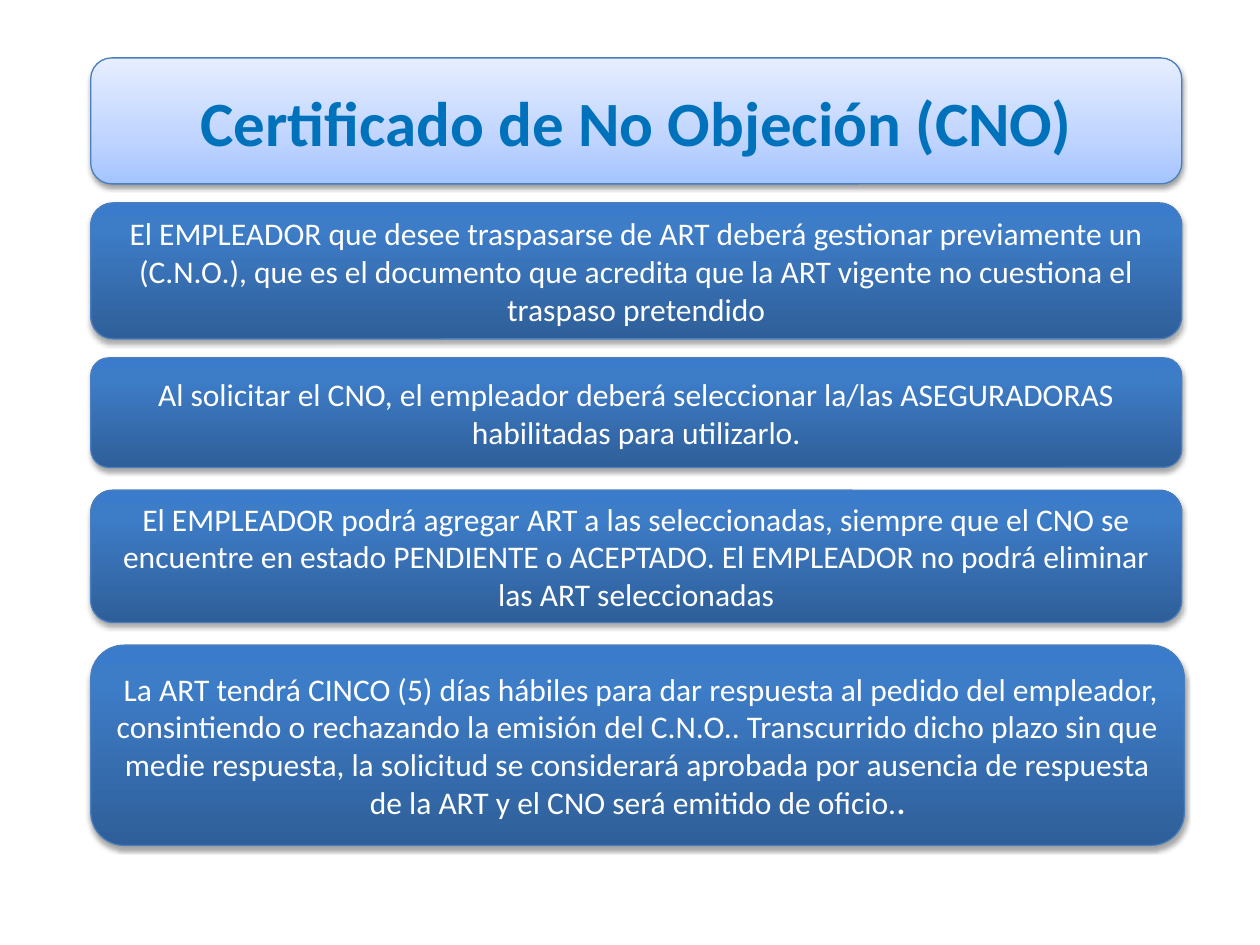
from lxml.etree import SubElement
from pptx import Presentation
from pptx.dml.color import RGBColor
from pptx.enum.shapes import MSO_SHAPE as Shape
from pptx.enum.text import MSO_ANCHOR as Anchor, PP_ALIGN as Align
from pptx.oxml.ns import qn
from pptx.util import Inches, Pt

COLORS = {
    "title": "0072BC",
    "text": "FFFFFF",
    "border": "4B7EBC",
    "shadow": "000000",
}
LIGHT_STOPS = [(0, "A4C4FF"), (35, "BFD4FF"), (100, "E6EEFF")]
DARK_STOPS = [(0, "2F5F99"), (80, "3D7CC7"), (100, "3A7CCB")]
LEFT, WIDTH = 0.72, 8.66

RULES = [
    (1.61, WIDTH, 1.08, [
        "El EMPLEADOR que desee traspasarse de ART deberá gestionar previamente un "
        "(C.N.O.), que es el documento que acredita que la ART vigente no cuestiona "
        "el traspaso pretendido"]),
    (2.84, WIDTH, 0.87, [
        "Al solicitar el CNO, el empleador deberá seleccionar la/las ASEGURADORAS "
        "habilitadas para utilizarlo."]),
    (5.12, 8.68, 1.59, [
        " La ART tendrá CINCO (5) días hábiles para dar respuesta al pedido del "
        "empleador, consintiendo o rechazando la emisión del C.N.O.. Transcurrido "
        "dicho plazo sin que medie respuesta, la solicitud se considerará aprobada "
        "por ausencia de respuesta de la ART y el CNO será emitido de oficio.",
        "."]),
    (3.89, WIDTH, 1.05, [
        "El EMPLEADOR podrá agregar ART a las seleccionadas, siempre que el CNO se "
        "encuentre en estado PENDIENTE o ACEPTADO. El EMPLEADOR no podrá eliminar "
        "las ART seleccionadas"]),
]


def set_gradient(box, stops):
    """Fill the box with color stops running from bottom to top."""
    box.fill.gradient()
    box.fill.gradient_angle = 90
    stop_list = box._element.spPr.find(".//" + qn("a:gsLst"))
    stop_list.clear()
    for position, color in stops:
        stop = SubElement(stop_list, qn("a:gs"), pos=str(position * 1000))
        SubElement(stop, qn("a:srgbClr"), val=color)


def set_shadow(box, distance, opacity):
    """Give the box a soft shadow that falls straight down."""
    box.shadow.inherit = False
    effects = box._element.spPr.find(qn("a:effectLst"))
    shadow = SubElement(effects, qn("a:outerShdw"), blurRad=str(Pt(3.1)),
                        dist=str(Pt(distance)), dir="5400000", rotWithShape="0")
    color = SubElement(shadow, qn("a:srgbClr"), val=COLORS["shadow"])
    SubElement(color, qn("a:alpha"), val=str(opacity * 1000))


def add_panel(page, top, width, height, stops, distance, opacity):
    """Add a rounded panel with gradient, border and shadow."""
    box = page.shapes.add_shape(Shape.ROUNDED_RECTANGLE, Inches(LEFT), Inches(top),
                                Inches(width), Inches(height))
    set_gradient(box, stops)
    box.line.color.rgb = RGBColor.from_string(COLORS["border"])
    box.line.width = Pt(0.75)
    set_shadow(box, distance, opacity)
    return box


def write_text(box, spans, size, color):
    """Write one centred paragraph and return its runs."""
    frame = box.text_frame
    frame.word_wrap = True
    frame.vertical_anchor = Anchor.MIDDLE
    para = frame.paragraphs[0]
    para.alignment = Align.CENTER
    para.font.name = "Calibri"
    para.font.size = Pt(size)
    para.font.color.rgb = RGBColor.from_string(color)
    for text in spans:
        para.add_run().text = text
    return para.runs


def add_title(page, text):
    """Add the light title panel."""
    box = add_panel(page, 0.46, WIDTH, 1, LIGHT_STOPS, 1.6, 38)
    write_text(box, [text], 36, COLORS["title"])[0].font.bold = True


def add_rule(page, top, width, height, spans):
    """Add a dark panel whose spans after the first are bold."""
    box = add_panel(page, top, width, height, DARK_STOPS, 1.8, 35)
    for span in write_text(box, spans, 18, COLORS["text"])[1:]:
        span.font.bold = True


def main():
    """Build the slide and save the deck."""
    deck = Presentation()
    deck.slide_width, deck.slide_height = Inches(10), Inches(7.5)
    page = deck.slides.add_slide(deck.slide_layouts[6])
    add_title(page, "Certificado de No Objeción (CNO)")
    for rule in RULES:
        add_rule(page, *rule)
    deck.save("out.pptx")


if __name__ == "__main__":
    main()
